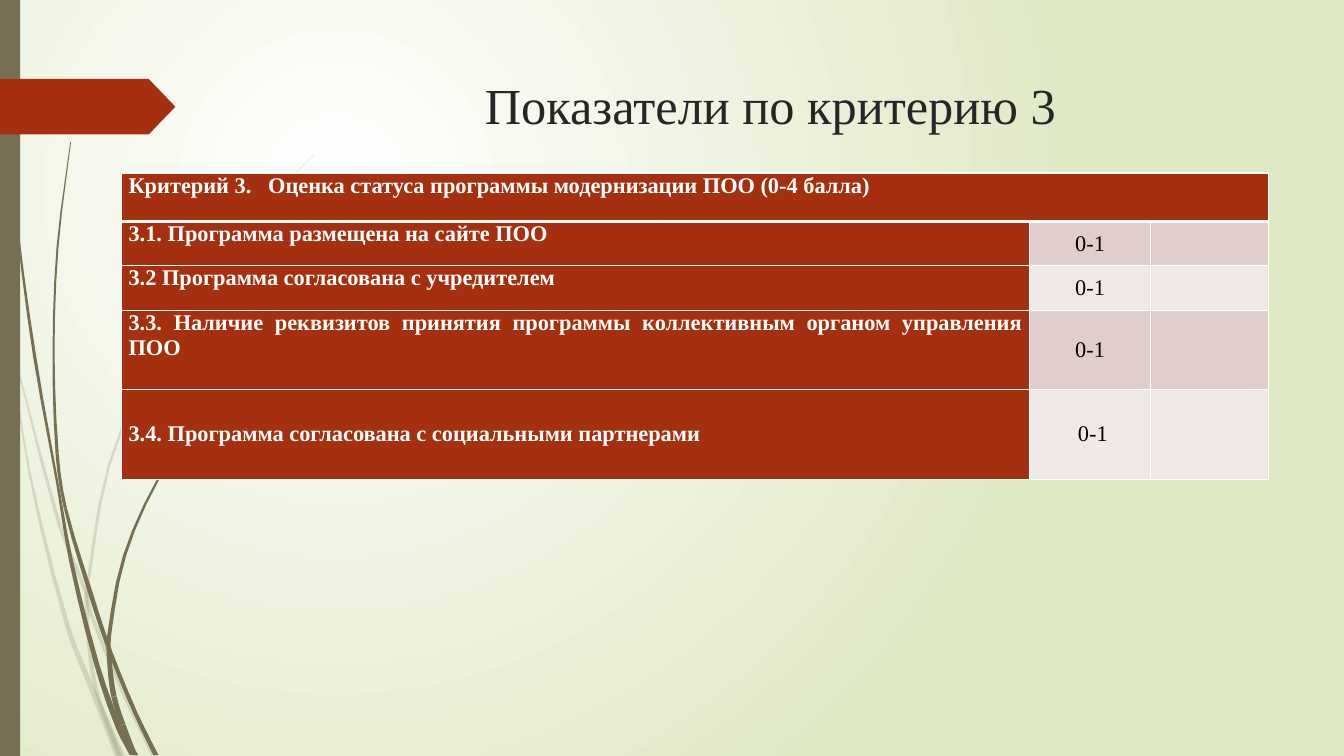
import dataclasses

import lxml.etree
import pptx
import pptx.dml.color
import pptx.enum.shapes
import pptx.enum.text
import pptx.oxml
import pptx.oxml.ns
import pptx.util

Cm = pptx.util.Cm
Color = pptx.dml.color.RGBColor.from_string
Align = pptx.enum.text.PP_ALIGN
Anchor = pptx.enum.text.MSO_ANCHOR
Preset = pptx.enum.shapes.MSO_SHAPE
qn = pptx.oxml.ns.qn


@dataclasses.dataclass(frozen=True)
class Theme:
    font: str = "Times New Roman"
    title_size: int = 36
    table_size: int = 16
    title: str = "262626"
    dark: str = "000000"
    light: str = "FFFFFF"
    accent: str = "A53010"
    stem: str = "766F54"
    glow: str = "DFE8C4"
    bands: tuple = ("E1CDCC", "F0E8E7")


theme = Theme()


def write(text, frame, size, color, bold=False, align=Align.CENTER, anchor=Anchor.TOP):
    frame.vertical_anchor = anchor
    para = frame.paragraphs[0]
    para.alignment = align
    span = para.add_run()
    span.text = text
    span.font.name = theme.font
    span.font.size = pptx.util.Pt(size)
    span.font.bold = bold
    span.font.color.rgb = Color(color)


def paint(shape, color):
    shape.shadow.inherit = False
    shape.fill.solid()
    shape.fill.fore_color.rgb = Color(color)
    shape.line.fill.background()


deck = pptx.Presentation()
deck.slide_width = Cm(33.87)
deck.slide_height = Cm(19.05)
page = deck.slides.add_slide(deck.slide_layouts[5])

backdrop = page.background.fill
backdrop.gradient()
for stop, color in zip(backdrop.gradient_stops, (theme.light, theme.glow)):
    stop.color.rgb = Color(color)
gradient = page.element.xpath(".//p:bg//a:gradFill")[0]
gradient.remove(gradient.find(qn("a:lin")))
circle = lxml.etree.SubElement(gradient, qn("a:path"), path="circle")
lxml.etree.SubElement(
    circle, qn("a:fillToRect"), l="50000", t="50000", r="100000", b="100000"
)

stems = [
    (20, (8.89, 18.14), [
        (0, 7.37, 0.02), (0.28, 8.89, 0.02), (0.75, 11.94, 0.06), (1.7, 15.77, 0.12),
        (2.4, 17.55, 0.16), (2.65, 18.14, 0.2), (3.02, 19.05, 0.25)]),
    (20, (14.88, 15.5), [
        (0.38, 9, 0.03), (1.5, 13.23, 0.1), (2.15, 14.88, 0.1), (2.3, 15.5, 0.1),
        (3.18, 17.6, 0.12), (3.88, 19.05, 0.13)]),
    (20, (15.14, 17.35, 18.06), [
        (7.92, 3.89, 0.02), (6.81, 5.02, 0.03), (5.8, 6.2, 0.04), (4.01, 8.85, 0.06),
        (2.75, 11.72, 0.07), (2.2, 14.83, 0.08), (2.18, 15.14, 0.1), (2.26, 16.41, 0.1),
        (2.42, 17.35, 0.1), (2.64, 18.06, 0.1), (3.02, 19.05, 0.13)]),
    (100, (12.2, 18.32), [
        (0.08, 0, 0.02), (0.18, 2.79, 0.04), (0.46, 5.92, 0.05), (0.88, 9.02, 0.08),
        (1.45, 12.2, 0.06), (1.79, 14.13, 0.1), (2.43, 16.71, 0.13),
        (2.99, 18.32, 0.16), (3.38, 19.03, 0.22)]),
    (100, (11.43, 12.82, 16.38), [
        (1.78, 3.58, 0.02), (1.45, 6.22, 0.05), (1.35, 8.86, 0.05), (1.44, 11.43, 0.08),
        (1.65, 12.82, 0.08), (2.3, 15.01, 0.12), (2.76, 16.38, 0.11),
        (3.41, 17.96, 0.11), (3.93, 19.03, 0.13)]),
    (100, (16.03, 16.66, 17.55, 18.26), [
        (6.62, 8.74, 0.02), (5.19, 10.3, 0.04), (3.99, 12.07, 0.06), (3.14, 14, 0.08),
        (2.75, 16.03, 0.1), (2.76, 16.66, 0.12), (2.87, 17.55, 0.14),
        (3.1, 18.26, 0.13), (3.4, 19.03, 0.12)]),
]
steps = 3
for opacity, joints, knots in stems:
    padded = [knots[0], *knots, knots[-1]]
    pieces = [[]]
    for before, start, end, after in zip(padded, padded[1:], padded[2:], padded[3:]):
        drop = end[1] - start[1]
        lean_start = (end[0] - before[0]) / (end[1] - before[1]) * drop
        lean_end = (after[0] - start[0]) / (after[1] - start[1]) * drop
        if start[1] in joints:
            pieces[-1].append(start)
            pieces.append([])
        for step in range(steps):
            t = step / steps
            blend = t * t * (3 - 2 * t)
            x = start[0] + (end[0] - start[0]) * blend
            x += lean_start * t * (1 - t) ** 2 - lean_end * t * t * (1 - t)
            width = start[2] + (end[2] - start[2]) * t
            pieces[-1].append((x, start[1] + drop * t, width))
    pieces[-1].append(knots[-1])
    for piece in pieces:
        left = [(Cm(max(x - width / 2, 0)), Cm(y)) for x, y, width in piece]
        right = [(Cm(x + width / 2), Cm(y)) for x, y, width in piece]
        outline = left + right[::-1]
        builder = page.shapes.build_freeform(*outline[0])
        builder.add_line_segments(outline[1:], close=True)
        stem = builder.convert_to_shape()
        paint(stem, theme.stem)
        if opacity < 100:
            tint = stem.element.spPr.find(qn("a:solidFill"))[0]
            lxml.etree.SubElement(tint, qn("a:alpha"), val=str(opacity * 1000))

side_bar = page.shapes.add_shape(Preset.RECTANGLE, 0, 0, Cm(0.51), deck.slide_height)
paint(side_bar, theme.stem)
pointer = page.shapes.add_shape(Preset.PENTAGON, 0, Cm(1.99), Cm(4.42), Cm(1.4))
pointer.adjustments[0] = 0.48
paint(pointer, theme.accent)

title = page.shapes.title
title.left, title.top, title.width, title.height = Cm(7.19), Cm(1.73), Cm(24.77), Cm(2.62)
title.text_frame.auto_size = pptx.enum.text.MSO_AUTO_SIZE.NONE
write("Показатели по критерию 3 ", title.text_frame, theme.title_size, theme.title)

rows = [
    ("Критерий 3.   Оценка статуса программы модернизации ПОО (0-4 балла)", "", 1.22),
    ("3.1. Программа размещена на сайте ПОО", "0-1", 1.11),
    ("3.2 Программа согласована с учредителем", "0-1", 1.13),
    ("3.3. Наличие реквизитов принятия программы коллективным органом управления ПОО",
     "0-1", 1.99),
    ("3.4. Программа согласована с социальными партнерами", " 0-1", 2.27),
]
widths = [22.88, 3.06, 2.96]
table = page.shapes.add_table(
    len(rows), len(widths), Cm(3.06), Cm(4.36),
    Cm(sum(widths)), Cm(sum(height for _, _, height in rows)),
).table
table.first_row = table.horz_banding = False
for column, width in zip(table.columns, widths):
    column.width = Cm(width)

for row, (label, score, height) in enumerate(rows):
    table.rows[row].height = Cm(height)
    for column, text in enumerate((label, score, "")):
        cell = table.cell(row, column)
        cell.margin_left = cell.margin_right = Cm(0.18)
        cell.margin_top = cell.margin_bottom = 0
        labelled = row == 0 or column == 0
        cell.fill.solid()
        cell.fill.fore_color.rgb = Color(
            theme.accent if labelled else theme.bands[(row - 1) % 2]
        )
        properties = cell._tc.get_or_add_tcPr()
        for place, side in enumerate(("lnL", "lnR", "lnT", "lnB")):
            thick = (row, side) in ((0, "lnB"), (1, "lnT"))
            border = lxml.etree.Element(qn("a:" + side), w=str(pptx.util.Pt(3 if thick else 1)))
            solid = lxml.etree.SubElement(border, qn("a:solidFill"))
            lxml.etree.SubElement(solid, qn("a:srgbClr"), val=theme.light)
            properties.insert(place, border)
        if text:
            middle_row = column == 1 or row == len(rows) - 1
            write(
                text, cell.text_frame, theme.table_size,
                theme.light if labelled else theme.dark, bold=labelled,
                align=Align.JUSTIFY if labelled else Align.CENTER,
            )
            cell.vertical_anchor = Anchor.MIDDLE if middle_row else Anchor.TOP
table.cell(0, 0).merge(table.cell(0, 2))

deck.save("out.pptx")
